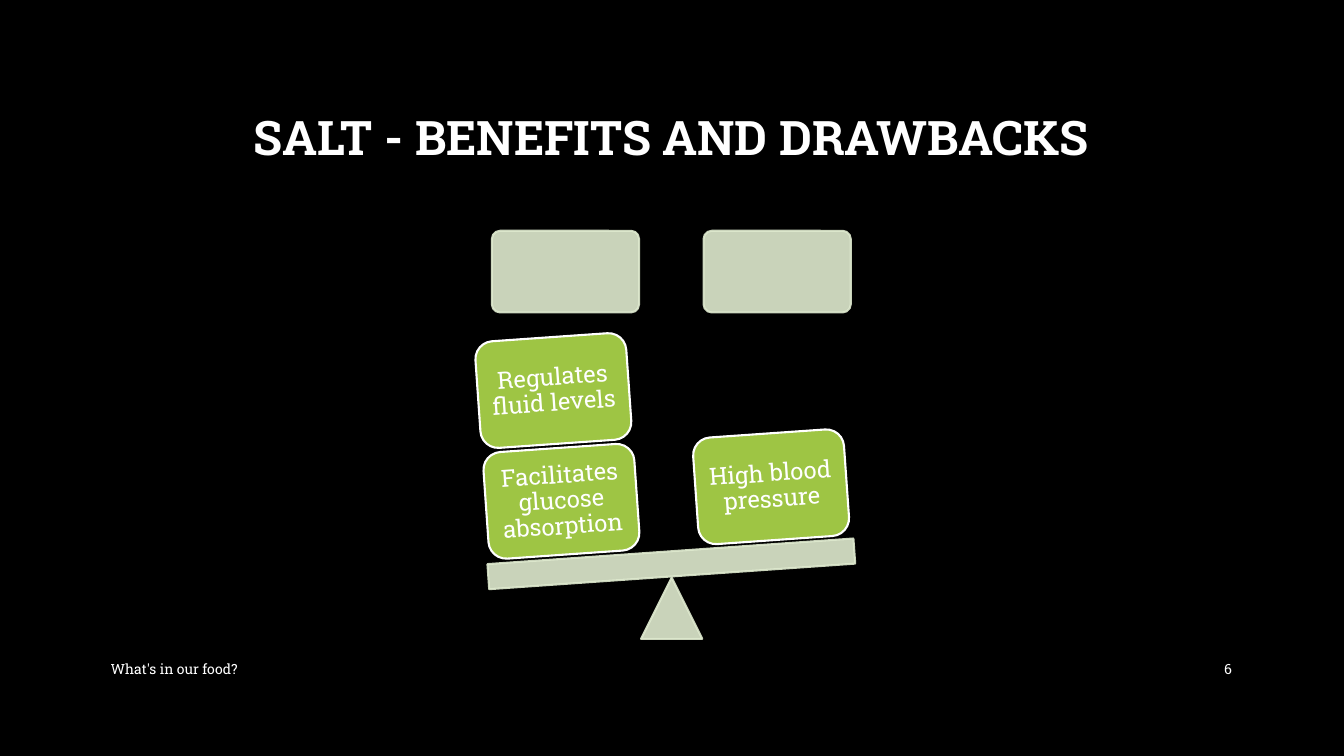
"""Build a slide that weighs the benefits of salt against its drawbacks."""
from lxml import etree
from pptx import Presentation
from pptx.dml.color import RGBColor
from pptx.enum.shapes import MSO_SHAPE
from pptx.enum.text import MSO_ANCHOR, PP_ALIGN
from pptx.oxml.ns import qn
from pptx.util import Inches, Pt

ROUNDED, RECT = MSO_SHAPE.ROUNDED_RECTANGLE, MSO_SHAPE.RECTANGLE
TRIANGLE = MSO_SHAPE.ISOSCELES_TRIANGLE
LEFT, CENTER, RIGHT = PP_ALIGN.LEFT, PP_ALIGN.CENTER, PP_ALIGN.RIGHT
MIDDLE = MSO_ANCHOR.MIDDLE

SLIDE_W, SLIDE_H = Inches(13.33), Inches(7.5)
FONT = "Roboto Slab"
BLACK, WHITE, GREEN, PALE = "000000", "FFFFFF", "9EC544", "DFEACF"
TILT = -4
CARD_W, CARD_H = 11.25, 14.13
FOOTER_TOP, FOOTER_H = 85.8, 5.33


def rgb(color):
    return RGBColor.from_string(color)


def area(x, y, w, h):
    """Turn percentages of the slide's width and height into lengths."""
    return (int(SLIDE_W * x / 100), int(SLIDE_H * y / 100),
            int(SLIDE_W * w / 100), int(SLIDE_H * h / 100))


def write(tf, text, size, align, bold=False, spacing=None):
    tf.word_wrap = True
    tf.vertical_anchor = MIDDLE
    p = tf.paragraphs[0]
    p.alignment = align
    p.line_spacing = spacing
    r = p.add_run()
    r.text = text
    r.font.name, r.font.size, r.font.bold = FONT, Pt(size), bold
    r.font.color.rgb = rgb(WHITE)


def add_text(s, box, *args, **kwargs):
    write(s.shapes.add_textbox(*area(*box)).text_frame, *args, **kwargs)


def add_block(s, kind, box, fill, line, rotation=0):
    sp = s.shapes.add_shape(kind, *area(*box))
    sp.shadow.inherit = False
    sp.rotation = rotation
    sp.fill.solid()
    sp.fill.fore_color.rgb = rgb(fill)
    sp.line.color.rgb = rgb(line)
    sp.line.width = Pt(1.5)
    return sp


def add_scale_part(s, kind, box, rotation=0):
    sp = add_block(s, kind, box, PALE, PALE, rotation)
    for color in sp.fill._xPr.iter(qn("a:srgbClr")):
        etree.SubElement(color, qn("a:alpha"), val="90000")
    return sp


def add_card(s, x, y, text):
    sp = add_block(s, ROUNDED, (x, y, CARD_W, CARD_H), GREEN, WHITE, TILT)
    tf = sp.text_frame
    tf.margin_left = tf.margin_right = Inches(0.07)
    tf.margin_top = tf.margin_bottom = Inches(0.07)
    write(tf, text, 17, CENTER, spacing=0.9)


def main():
    prs = Presentation()
    prs.slide_width, prs.slide_height = SLIDE_W, SLIDE_H
    s = prs.slides.add_slide(prs.slide_layouts[6])
    s.background.fill.solid()
    s.background.fill.fore_color.rgb = rgb(BLACK)

    add_text(s, (7.5, 8.93, 84.9, 19.33), "SALT - BENEFITS AND DRAWBACKS",
             34, CENTER, bold=True, spacing=0.9)

    for x in (36.6, 52.35):
        add_scale_part(s, ROUNDED, (x, 30.53, 10.95, 10.8)).adjustments[0] = 0.1
    add_scale_part(s, TRIANGLE, (47.7, 76.4, 4.55, 8.1))
    add_scale_part(s, RECT, (36.3, 72.93, 27.3, 3.33), TILT)

    for x, y, text in (
        (36.15, 59.25, "Facilitates glucose absorption"),
        (35.55, 44.6, "Regulates fluid levels"),
        (51.75, 57.33, "High blood pressure"),
    ):
        add_card(s, x, y, text)

    add_text(s, (7.5, FOOTER_TOP, 54.75, FOOTER_H), "What's in our food?", 10, LEFT)
    add_text(s, (86.25, FOOTER_TOP, 6.15, FOOTER_H), "6", 10, RIGHT)
    prs.save("out.pptx")


if __name__ == "__main__":
    main()
